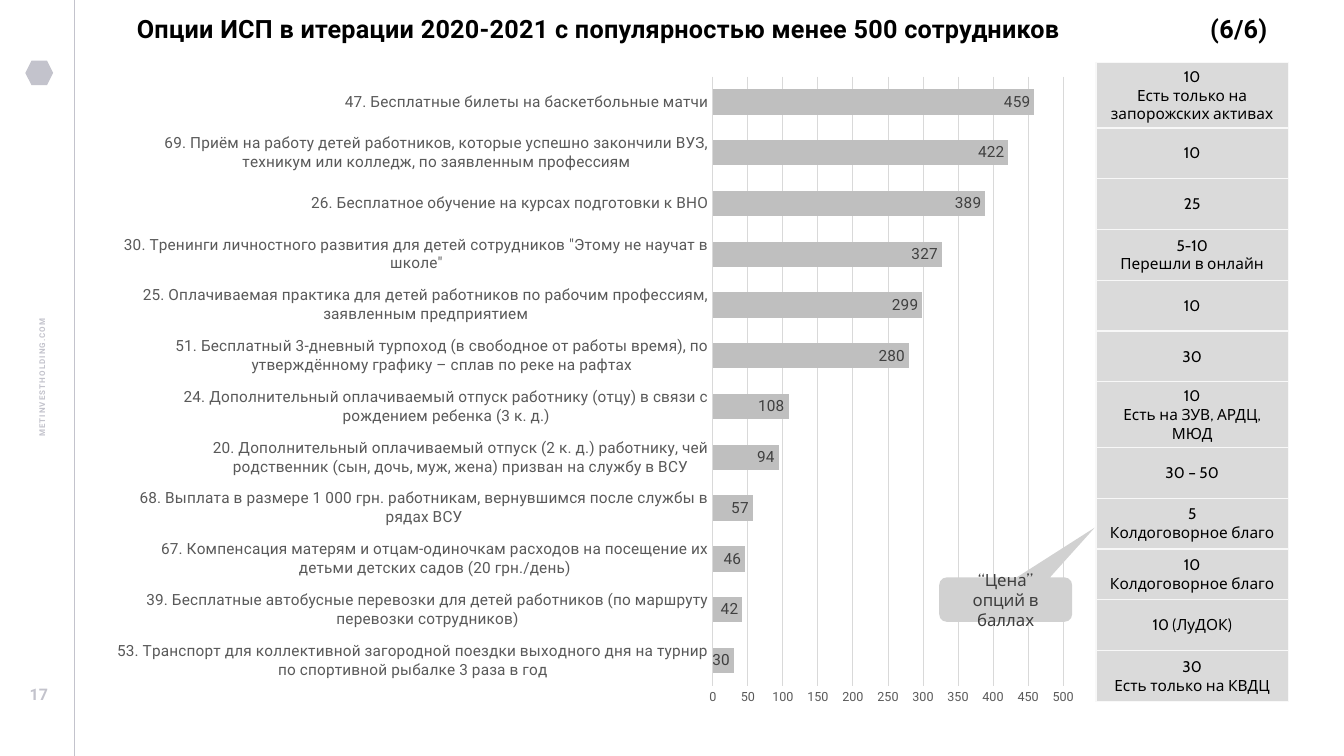
from lxml import etree
from pptx import Presentation
from pptx import util as u
from pptx.chart.data import CategoryChartData
from pptx.dml.color import RGBColor
from pptx.enum import chart as ch, shapes, text
from pptx.oxml import parse_xml
from pptx.oxml.ns import qn, nsdecls

COLORS = {"black": "000000", "brand": "C3C3CC", "bar": "BFBFBF", "grid": "D9D9D9",
          "axis": "595959", "value": "404040", "cell": "DADADA", "border": "F8F8F8",
          "callout": "D1D1D1", "callout_text": "3E3E3E"}
TITLE = "Опции ИСП в итерации 2020-2021 с популярностью менее 500 сотрудников\t(6/6)"
SITE = "METINVESTHOLDING.COM"
PAGE = "17"
PRICE_NOTE = "“Цена” опций в баллах"
OPTIONS = [
    ("47. Бесплатные билеты на баскетбольные матчи", 459,
     ["10", "Есть только на запорожских активах"]),
    ("69. Приём на работу детей работников, которые успешно закончили ВУЗ, техникум или колледж, "
     "по заявленным профессиям", 422, ["10"]),
    ("26. Бесплатное обучение на курсах подготовки к ВНО", 389, ["25"]),
    ("30. Тренинги личностного развития для детей сотрудников \"Этому не научат в школе\"", 327,
     ["5-10", "Перешли в онлайн"]),
    ("25. Оплачиваемая практика для детей работников по рабочим профессиям, "
     "заявленным предприятием", 299, ["10"]),
    ("51. Бесплатный 3-дневный турпоход (в свободное от работы время), по утверждённому графику "
     "– сплав по реке на рафтах", 280, ["30"]),
    ("24. Дополнительный оплачиваемый отпуск работнику (отцу) в связи с рождением ребенка (3 к. д.)",
     108, ["10", "Есть на ЗУВ, АРДЦ, МЮД"]),
    ("20. Дополнительный оплачиваемый отпуск (2 к. д.) работнику, чей родственник "
     "(сын, дочь, муж, жена) призван на службу в ВСУ", 94, ["30 – 50"]),
    ("68. Выплата в размере 1 000 грн. работникам, вернувшимся после службы в рядах ВСУ", 57,
     ["5", "Колдоговорное благо"]),
    ("67. Компенсация матерям и отцам-одиночкам расходов на посещение их детьми детских садов "
     "(20 грн./день)", 46, ["10", "Колдоговорное благо"]),
    ("39. Бесплатные автобусные перевозки для детей работников (по маршруту перевозки сотрудников)",
     42, ["10 (ЛуДОК)"]),
    ("53. Транспорт для коллективной загородной поездки выходного дня на турнир по спортивной "
     "рыбалке 3 раза в год", 30, ["30", "Есть только на КВДЦ"]),
]
PLOT = {"x": 0.61, "y": 0.02, "w": 0.36, "h": 0.93}


def rgb(name):
    return RGBColor.from_string(COLORS[name])


def style(font, size, color, face="Roboto", bold=False):
    font.size, font.name, font.bold = u.Pt(size), face, bold
    font.color.rgb = rgb(color)


def box(left, top, width, height, inset=True):
    shape = slide.shapes.add_textbox(u.Cm(left), u.Cm(top), u.Cm(width), u.Cm(height))
    frame = shape.text_frame
    frame.word_wrap = True
    if not inset:
        frame.margin_left = frame.margin_right = frame.margin_top = frame.margin_bottom = 0
    return shape, frame


def write(paragraph, words, size, color, face="Roboto", bold=False, spacing=None,
          align=text.PP_ALIGN.CENTER):
    run = paragraph.add_run()
    run.text = words
    paragraph.alignment = align
    style(paragraph.font, size, color, face, bold)
    if spacing:
        run._r.get_or_add_rPr().set("spc", str(spacing))


prs = Presentation()
prs.slide_width, prs.slide_height = u.Cm(33.87), u.Cm(19.05)
slide = prs.slides.add_slide(prs.slide_layouts[6])

emblem = slide.shapes.add_shape(shapes.MSO_SHAPE.HEXAGON, u.Cm(0.64), u.Cm(1.53),
                                u.Cm(0.7), u.Cm(0.62))
emblem.shadow.inherit = False
emblem.fill.solid()
emblem.fill.fore_color.rgb = rgb("brand")
emblem.line.fill.background()

site, site_frame = box(-6.6, 9.17, 15.19, 0.69, inset=False)
site.rotation = 270
site_frame.vertical_anchor = text.MSO_ANCHOR.MIDDLE
site_frame.paragraphs[0].line_spacing = 1.5
write(site_frame.paragraphs[0], SITE, 5.7, "brand", bold=True, spacing=80)

margin_line = slide.shapes.add_connector(shapes.MSO_CONNECTOR.STRAIGHT,
                                         u.Cm(1.88), u.Cm(19.05), u.Cm(1.88), 0)
margin_line.line.color.rgb = rgb("brand")
margin_line.line.width = u.Pt(0.5)
etree.SubElement(margin_line._element.spPr, qn("a:effectLst"))

page, page_frame = box(0, 17.12, 1.96, 0.74)
write(page_frame.paragraphs[0], PAGE, 11.4, "brand", bold=True)

data = CategoryChartData(number_format="#,##0")
data.categories = [name for name, _, _ in reversed(OPTIONS)]
data.add_series("Сотрудники", [count for _, count, _ in reversed(OPTIONS)])
popularity = slide.shapes.add_chart(ch.XL_CHART_TYPE.BAR_CLUSTERED, u.Cm(2.95), u.Cm(1.6),
                                    u.Cm(24.58), u.Cm(16.51), data).chart
popularity.has_legend = popularity.has_title = False
style(popularity.font, 10, "black")

names, counts = popularity.category_axis, popularity.value_axis
for axis, size in ((names, 11), (counts, 9)):
    axis.major_tick_mark = axis.minor_tick_mark = ch.XL_TICK_MARK.NONE
    style(axis.tick_labels.font, size, "axis")
names.has_major_gridlines = False
counts.minimum_scale, counts.maximum_scale, counts.major_unit = 0, 500, 50
counts.tick_labels.number_format = "#,##0"
counts.tick_labels.number_format_is_linked = False
counts.format.line.fill.background()
for line in (names.format.line, counts.major_gridlines.format.line):
    line.color.rgb = rgb("grid")
    line.width = u.Pt(0.75)

bars = popularity.plots[0]
bars.gap_width, bars.vary_by_categories = 100, False
bars.series[0].format.fill.solid()
bars.series[0].format.fill.fore_color.rgb = rgb("bar")
bars.has_data_labels = True
labels = bars.data_labels
labels.show_value = True
labels.position = ch.XL_LABEL_POSITION.INSIDE_END
labels.number_format, labels.number_format_is_linked = "#,##0", False
style(labels.font, 11, "value")

plot_area = popularity._chartSpace.chart.plotArea
for old in plot_area.findall(qn("c:layout")):
    plot_area.remove(old)
modes = '<c:layoutTarget val="inner"/><c:xMode val="edge"/><c:yMode val="edge"/>'
sizes = "".join(f'<c:{key} val="{part}"/>' for key, part in PLOT.items())
plot_area.insert(0, parse_xml(f'<c:layout {nsdecls("c")}><c:manualLayout>{modes}{sizes}'
                              '</c:manualLayout></c:layout>'))

title, title_frame = box(3.45, 0.33, 29.49, 1.24, inset=False)
heading = title_frame.paragraphs[0]
tabs = etree.SubElement(heading._p.get_or_add_pPr(), qn("a:tabLst"))
etree.SubElement(tabs, qn("a:tab"), pos=str(u.Cm(27.05)), algn="l")
write(heading, TITLE, 18, "black", bold=True, spacing=20, align=text.PP_ALIGN.LEFT)

FIRST_ROW, ROW = 1.65, 1.28
prices = slide.shapes.add_table(len(OPTIONS), 1, u.Cm(27.62), u.Cm(1.57), u.Cm(4.85),
                                u.Cm(FIRST_ROW + ROW * (len(OPTIONS) - 1))).table
prices.first_row = prices.horz_banding = False
for index, (_, _, price) in enumerate(OPTIONS):
    prices.rows[index].height = u.Cm(ROW if index else FIRST_ROW)
    cell = prices.cell(index, 0)
    cell.vertical_anchor = text.MSO_ANCHOR.MIDDLE
    for side in ("lnL", "lnR", "lnT", "lnB"):
        edge = etree.SubElement(cell._tc.get_or_add_tcPr(), qn(f"a:{side}"), w=str(u.Pt(1)))
        fill = etree.SubElement(edge, qn("a:solidFill"))
        etree.SubElement(fill, qn("a:srgbClr"), val=COLORS["border"])
    cell.fill.solid()
    cell.fill.fore_color.rgb = rgb("cell")
    for number, words in enumerate(price):
        frame = cell.text_frame
        paragraph = frame.add_paragraph() if number else frame.paragraphs[0]
        write(paragraph, words, 11, "black", "Cabin")

price_note = slide.shapes.add_shape(shapes.MSO_SHAPE.ROUNDED_RECTANGULAR_CALLOUT, u.Cm(23.67),
                                    u.Cm(14.55), u.Cm(3.35), u.Cm(1.12))
for index, value in enumerate((0.67, -1.62, 0.17)):
    price_note.adjustments[index] = value
price_note.shadow.inherit = False
price_note.fill.solid()
price_note.fill.fore_color.rgb = rgb("callout")
price_note.line.fill.background()
price_note.text_frame.word_wrap = True
price_note.text_frame.vertical_anchor = text.MSO_ANCHOR.MIDDLE
write(price_note.text_frame.paragraphs[0], PRICE_NOTE, 12, "callout_text", "Cabin")

prs.save("out.pptx")
